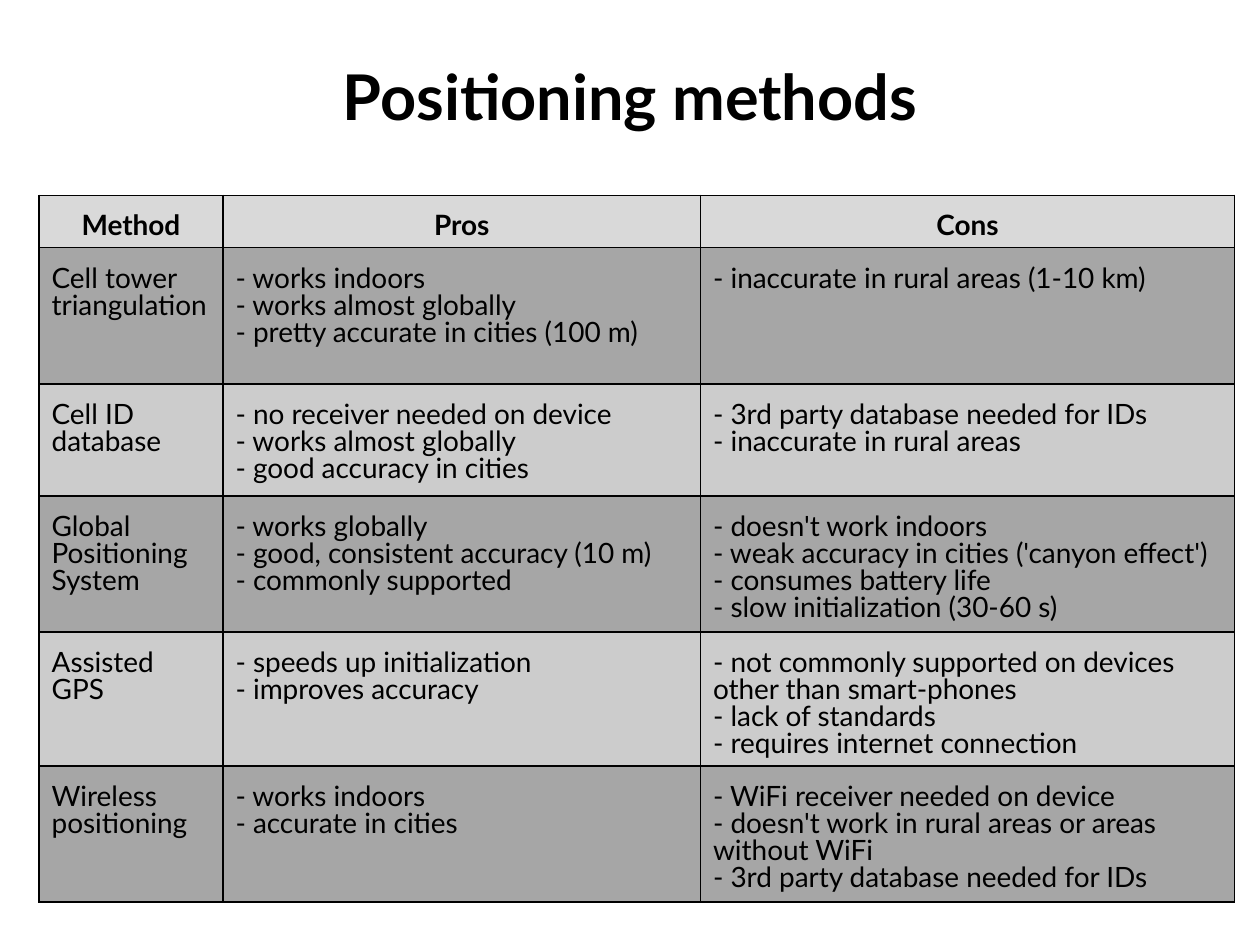
from lxml import etree
from pptx import Presentation
from pptx.dml.color import RGBColor
from pptx.enum.text import MSO_ANCHOR, PP_ALIGN
from pptx.oxml.ns import qn
from pptx.util import Pt

LEFT, CENTER = PP_ALIGN.LEFT, PP_ALIGN.CENTER
MIDDLE = MSO_ANCHOR.MIDDLE

BLACK = RGBColor(0x00, 0x00, 0x00)
HEAD = RGBColor(0xD9, 0xD9, 0xD9)
DARK = RGBColor(0xA6, 0xA6, 0xA6)
LIGHT = RGBColor(0xCC, 0xCC, 0xCC)

# Table content: one list of lines per cell
TITLES = [["Method"], ["Pros"], ["Cons"]]
METHODS = [
    [["Cell tower triangulation"],
     ["- works indoors", "- works almost globally",
      "- pretty accurate in cities (100 m)"],
     ["- inaccurate in rural areas (1-10 km)"]],
    [["Cell ID database"],
     ["- no receiver needed on device", "- works almost globally",
      "- good accuracy in cities"],
     ["- 3rd party database needed for IDs", "- inaccurate in rural areas"]],
    [["Global Positioning System"],
     ["- works globally", "- good, consistent accuracy (10 m)",
      "- commonly supported"],
     ["- doesn't work indoors", "- weak accuracy in cities ('canyon effect')",
      "- consumes battery life", "- slow initialization (30-60 s)"]],
    [["Assisted GPS"],
     ["- speeds up initialization", "- improves accuracy"],
     ["- not commonly supported on devices other than smart-phones",
      "- lack of standards", "- requires internet connection"]],
    [["Wireless positioning"],
     ["- works indoors", "- accurate in cities"],
     ["- WiFi receiver needed on device",
      "- doesn't work in rural areas or areas without WiFi",
      "- 3rd party database needed for IDs"]],
]
WIDTHS = [105.12, 272.88, 305.28]
HEIGHTS = [24.48, 77.76, 64.08, 77.76, 64.08, 77.76]


def write(frame, lines, size=16, bold=False, align=LEFT, space=None):
    """Fill a text frame with one paragraph per line."""
    frame.word_wrap = True
    for i, line in enumerate(lines):
        para = frame.paragraphs[0] if i == 0 else frame.add_paragraph()
        para.alignment = align
        para.line_spacing = space
        run = para.add_run()
        run.text = line
        font = run.font
        font.name, font.size, font.bold = "Lato", Pt(size), bold
        font.color.rgb = BLACK


class Deck:
    def __init__(self):
        self.show = Presentation()
        self.show.slide_width, self.show.slide_height = Pt(720), Pt(540)
        self.slide = self.show.slides.add_slide(self.show.slide_layouts[6])

    def title(self, text, x, y, w, h):
        box = self.slide.shapes.add_textbox(Pt(x), Pt(y), Pt(w), Pt(h))
        box.text_frame.vertical_anchor = MIDDLE
        write(box.text_frame, [text], size=36, bold=True, align=CENTER)

    def table(self, rows, x, y, widths, heights):
        grid = self.slide.shapes.add_table(
            len(rows), len(widths), Pt(x), Pt(y),
            Pt(sum(widths)), Pt(sum(heights))).table
        for col, width in zip(grid.columns, widths):
            col.width = Pt(width)
        for r, (row, height) in enumerate(zip(rows, heights)):
            grid.rows[r].height = Pt(height)
            fill = HEAD if r == 0 else DARK if r % 2 else LIGHT
            for c, lines in enumerate(row):
                self.cell(grid.cell(r, c), lines, fill, r == 0)

    def cell(self, cell, lines, fill, head):
        cell.margin_left = cell.margin_right = Pt(7.2)
        cell.margin_top, cell.margin_bottom = Pt(10.8), Pt(3.6)
        write(cell.text_frame, lines, bold=head,
              align=CENTER if head else LEFT, space=0.81)
        # Borders come before the fill in the cell properties
        props = cell._tc.get_or_add_tcPr()
        for side in ("a:lnL", "a:lnR", "a:lnT", "a:lnB"):
            line = etree.SubElement(props, qn(side), w=str(Pt(1)))
            solid = etree.SubElement(line, qn("a:solidFill"))
            etree.SubElement(solid, qn("a:srgbClr"), val=str(BLACK))
        cell.fill.solid()
        cell.fill.fore_color.rgb = fill


def main():
    deck = Deck()
    # Heading
    deck.title("Positioning methods", 36, 9.36, 648, 90)
    # Comparison of methods
    deck.table([TITLES] + METHODS, 22.32, 111.6, WIDTHS, HEIGHTS)
    deck.show.save("out.pptx")


if __name__ == "__main__":
    main()
